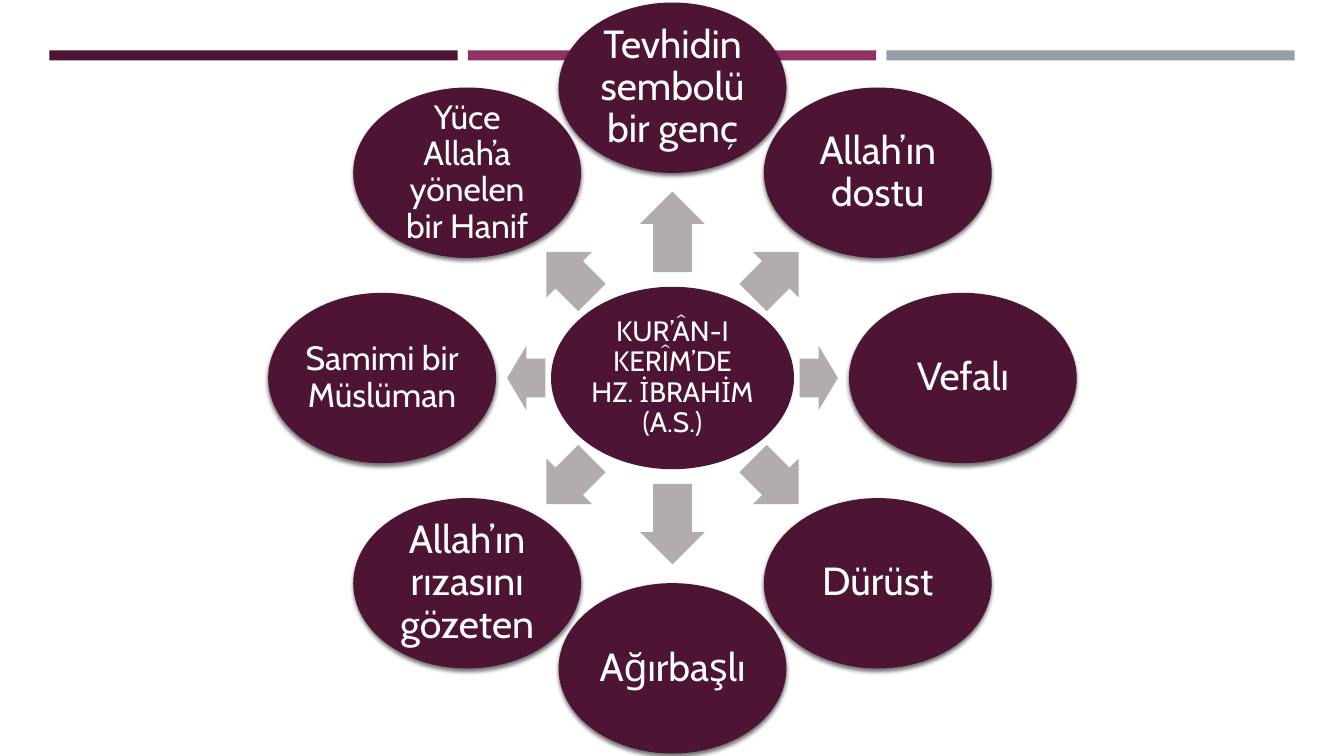
from math import cos, radians, sin

from lxml.etree import SubElement
from pptx import Presentation
from pptx.dml.color import RGBColor
from pptx.enum.shapes import MSO_SHAPE as SHAPE
from pptx.enum.text import MSO_ANCHOR as ANCHOR, PP_ALIGN as ALIGN
from pptx.oxml.ns import qn
from pptx.util import Inches, Pt

COLORS = {
    "plum": "4D1434",
    "magenta": "903163",
    "slate": "969FA7",
    "arrow": "B2ACAE",
    "white": "FFFFFF",
    "black": "000000",
}
CENTER_X, CENTER_Y = 6.67, 3.75
TRAIT_RADIUS, ARROW_RADIUS = 2.88, 1.45
TRAITS = [
    ("Tevhidin sembolü bir genç", 28, 0.8),
    ("Allah’ın dostu", 28, 0.64),
    ("Vefalı", 28, 0.38),
    ("Dürüst", 28, 0.64),
    ("Ağırbaşlı", 28, 0.8),
    ("Allah’ın rızasını gözeten", 28, 0.64),
    ("Samimi bir Müslüman", 24, 0.38),
    ("Yüce Allah’a yönelen bir Hanif", 24, 0.64),
]


def write_text(sp, text, size=28, font="Cabin", color="white", inset=0.04):
    tf = sp.text_frame
    tf.word_wrap = True
    tf.vertical_anchor = ANCHOR.MIDDLE
    tf.margin_left = tf.margin_right = Inches(inset)
    tf.margin_top = tf.margin_bottom = Inches(inset)
    p = tf.paragraphs[0]
    p.alignment = ALIGN.CENTER
    p.line_spacing = 0.9
    r = p.add_run()
    r.text = text
    r.font.name = font
    r.font.size = Pt(size)
    r.font.color.rgb = RGBColor.from_string(COLORS[color])


class Deck:
    def __init__(self):
        self.prs = Presentation()
        self.prs.slide_width = Inches(13.33)
        self.prs.slide_height = Inches(7.5)
        self.s = self.prs.slides.add_slide(self.prs.slide_layouts[6])

    def shape(self, kind, x, y, w, h, color):
        sp = self.s.shapes.add_shape(
            kind, Inches(x - w / 2), Inches(y - h / 2), Inches(w), Inches(h))
        sp.shadow.inherit = False
        sp.fill.solid()
        sp.fill.fore_color.rgb = RGBColor.from_string(COLORS[color])
        sp.line.fill.background()
        return sp

    def bar(self, left, color):
        self.shape(SHAPE.RECTANGLE, left + 4.05 / 2, 0.55, 4.05, 0.1, color)

    def oval(self, text, x, y, w, h, size, shadow=True):
        sp = self.shape(SHAPE.OVAL, x, y, w, h, "plum")
        write_text(sp, text, size=size, inset=0.04 if size > 24 else 0.03)
        if shadow:
            self.drop_shadow(sp)

    def drop_shadow(self, sp):
        effects = sp._element.spPr.find(qn("a:effectLst"))
        shadow = SubElement(
            effects, qn("a:outerShdw"), blurRad=str(Pt(3)), dist=str(Pt(2)),
            dir="5400000", algn="ctr", rotWithShape="0")
        color = SubElement(shadow, qn("a:srgbClr"), val=COLORS["black"])
        SubElement(color, qn("a:alpha"), val="55000")

    def arrow(self, x, y, length, angle):
        sp = self.shape(SHAPE.RIGHT_ARROW, x, y, length, 0.64, "arrow")
        sp.adjustments[0] = 0.6
        sp.adjustments[1] = 0.5
        sp.rotation = angle


def around(radius, angle):
    a = radians(angle)
    return CENTER_X + radius * cos(a), CENTER_Y + radius * sin(a)


def main():
    deck = Deck()
    for i, color in enumerate(["plum", "magenta", "slate"]):
        deck.bar(0.49 + 4.15 * i, color)
    deck.oval("KUR’ÂN-I KERÎM’DE HZ. İBRAHİM (A.S.)",
              CENTER_X, CENTER_Y, 2.41, 1.81, size=20, shadow=False)
    for i, (text, size, arrow_length) in enumerate(TRAITS):
        angle = (270 + i * 360 / len(TRAITS)) % 360
        deck.arrow(*around(ARROW_RADIUS, angle), arrow_length, angle)
        deck.oval(text, *around(TRAIT_RADIUS, angle), 2.26, 1.69, size)
    deck.prs.save("out.pptx")


if __name__ == "__main__":
    main()
